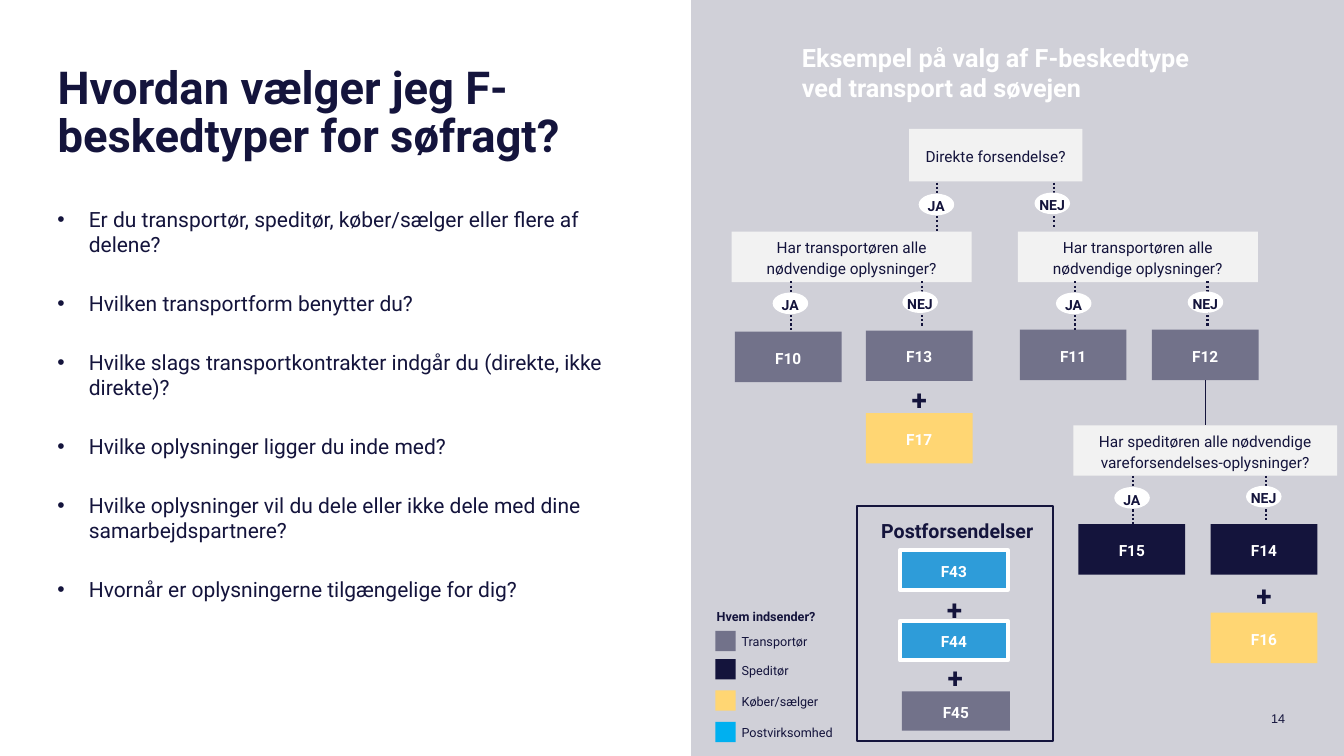
from dataclasses import dataclass

from lxml import etree
from pptx import Presentation
from pptx.dml.color import RGBColor
from pptx.enum import dml, shapes, text
from pptx.oxml import ns
from pptx.util import Cm, Pt


@dataclass(frozen=True)
class Theme:
    navy: str = "14143C"
    grey: str = "72728A"
    panel: str = "D0D0D8"
    pale: str = "F2F2F2"
    yellow: str = "FFD673"
    blue: str = "2E9CD9"
    cyan: str = "00B0F0"
    white: str = "FFFFFF"
    font: str = "Roboto"
    number_font: str = "Arial"
    title: float = 32.4
    plus: float = 20
    heading: float = 18
    body: float = 15
    post: float = 14
    node: float = 11
    answer: float = 10
    small: float = 9


THEME = Theme()

# All positions and sizes are in centimetres.
TITLE = "Hvordan vælger jeg F- beskedtyper for søfragt?"
BULLETS = [
    "Er du transportør, speditør, køber/sælger eller flere af delene?",
    "Hvilken transportform benytter du?",
    "Hvilke slags transportkontrakter indgår du (direkte, ikke direkte)?",
    "Hvilke oplysninger ligger du inde med?",
    "Hvilke oplysninger vil du dele eller ikke dele med dine samarbejdspartnere?",
    "Hvornår er oplysningerne tilgængelige for dig?",
]
HEADING = ["Eksempel på valg af F-beskedtype", "ved transport ad søvejen"]
CARRIER_QUESTION = "Har transportøren alle nødvendige oplysninger?"
QUESTIONS = [
    ("Direkte forsendelse?", (22.91, 3.25, 4.37, 1.32)),
    (CARRIER_QUESTION, (18.44, 5.84, 6.05, 1.27)),
    (CARRIER_QUESTION, (25.65, 5.84, 6.05, 1.27)),
    ("Har speditøren alle nødvendige vareforsendelses-oplysninger?",
     (27.05, 10.72, 6.65, 1.27)),
]
MESSAGE_SIZE = (2.69, 1.27)
MESSAGES = [
    ("F10", 18.52, 8.36, THEME.grey),
    ("F13", 21.82, 8.33, THEME.grey),
    ("F11", 25.70, 8.31, THEME.grey),
    ("F12", 29.03, 8.31, THEME.grey),
    ("F17", 21.82, 10.41, THEME.yellow),
    ("F15", 27.18, 13.21, THEME.navy),
    ("F14", 30.51, 13.21, THEME.navy),
    ("F16", 30.51, 15.44, THEME.yellow),
]
MESSAGE_PLUSES = [(22.53, 9.55), (31.22, 14.48)]
POST_SIZE = (2.72, 0.99)
POST_MESSAGES = [
    ("F43", 22.68, 13.87, THEME.blue, THEME.white),
    ("F44", 22.68, 15.65, THEME.blue, THEME.white),
    ("F45", 22.73, 17.42, THEME.grey, None),
]
POST_PLUSES = [(23.42, 14.83), (23.44, 16.56)]
# Top of the branch, x of the yes line, x of the no line
BRANCHES = [
    (4.60, 23.62, 26.57),
    (7.09, 19.94, 23.24),
    (7.09, 27.08, 30.43),
    (11.99, 28.55, 31.90),
]
# Answer: line length, ellipse offset from the top of the line
ANSWERS = {"JA": (1.26, -0.45, 0.30), "NEJ": (1.14, -0.48, 0.27)}
LEGEND = [
    ("Transportør", 15.90, THEME.grey),
    ("Speditør", 16.61, THEME.navy),
    ("Køber/sælger", 17.40, THEME.yellow),
    ("Postvirksomhed", 18.19, THEME.cyan),
]


def write(shape, content, *, size, color=THEME.navy, bold=False, font=THEME.font,
          align=text.PP_ALIGN.LEFT, anchor=text.MSO_ANCHOR.TOP, inset=None,
          spacing=None, after=None, bullet=None, wrap=True):
    """Fill a shape with one paragraph, or with one paragraph per list item."""
    frame = shape.text_frame
    frame.auto_size = text.MSO_AUTO_SIZE.NONE
    frame.word_wrap = wrap
    frame.vertical_anchor = anchor
    if inset is not None:
        frame.margin_left = frame.margin_right = Cm(inset)
        frame.margin_top = frame.margin_bottom = Cm(inset)
    lines = [content] if isinstance(content, str) else content
    for index, line in enumerate(lines):
        para = frame.paragraphs[0] if index == 0 else frame.add_paragraph()
        para.alignment = align
        if spacing:
            para.line_spacing = spacing
        if after:
            para.space_after = Pt(after)
        if bullet:
            properties = para._p.get_or_add_pPr()
            properties.set("marL", str(Cm(0.79)))
            properties.set("indent", str(-Cm(0.79)))
            etree.SubElement(properties, ns.qn("a:buFont")).set("typeface", "Arial")
            etree.SubElement(properties, ns.qn("a:buChar")).set("char", bullet)
        span = para.add_run()
        span.text = line
        span.font.name = font
        span.font.size = Pt(size)
        span.font.bold = bold
        span.font.color.rgb = RGBColor.from_string(color)


def add_label(parent, content, box, **style):
    label = parent.add_textbox(*map(Cm, box))
    write(label, content, **style)


def add_block(parent, box, fill=None, line=None, width=1,
              kind=shapes.MSO_SHAPE.RECTANGLE):
    block = parent.add_shape(kind, *map(Cm, box))
    block.shadow.inherit = False
    if fill:
        block.fill.solid()
        block.fill.fore_color.rgb = RGBColor.from_string(fill)
    else:
        block.fill.background()
    if line:
        block.line.color.rgb = RGBColor.from_string(line)
        block.line.width = Pt(width)
    else:
        block.line.fill.background()
    return block


def add_node(parent, content, box, fill, line=None, **style):
    block = add_block(parent, box, fill, line, width=3)
    write(block, content, size=THEME.node, align=text.PP_ALIGN.CENTER,
          anchor=text.MSO_ANCHOR.MIDDLE, spacing=1.11, **style)


def add_drop(parent, x, top, length, width, dash=None):
    """Draw a vertical line downwards from its top end."""
    drop = parent.add_connector(shapes.MSO_CONNECTOR.STRAIGHT,
                                Cm(x), Cm(top), Cm(x), Cm(top + length))
    drop.line.color.rgb = RGBColor.from_string(THEME.navy)
    drop.line.width = Pt(width)
    if dash:
        drop.line.dash_style = dash
    etree.SubElement(drop._element.spPr, ns.qn("a:effectLst"))


def add_plus(parent, x, y):
    add_label(parent, "+", (x, y, 1.27, 0.86), size=THEME.plus, bold=True,
              align=text.PP_ALIGN.CENTER, inset=0, spacing=1.11)


def add_answer(page, answer, x, top):
    length, dx, dy = ANSWERS[answer]
    parent = page.shapes.add_group_shape().shapes
    add_drop(parent, x, top, length, 1.5, dml.MSO_LINE.ROUND_DOT)
    add_block(parent, (x + dx, top + dy, 0.86, 0.51), THEME.white, THEME.white,
              kind=shapes.MSO_SHAPE.OVAL)
    add_label(parent, answer, (x + dx - 0.07, top + dy + 0.04, 0.99, 0.30),
              size=THEME.answer, bold=True, align=text.PP_ALIGN.CENTER,
              inset=0, spacing=1.11)


def add_flow(page):
    for content, box in QUESTIONS:
        add_node(page.shapes, content, box, THEME.pale)
    for code, x, y, fill in MESSAGES:
        add_node(page.shapes, code, (x, y, *MESSAGE_SIZE), fill,
                 color=THEME.white, bold=True)
    for place in MESSAGE_PLUSES:
        add_plus(page.shapes, *place)
    add_drop(page.shapes, 30.38, 9.58, 1.14, 0.5)
    for top, *columns in BRANCHES:
        for answer, x in zip(ANSWERS, columns):
            add_answer(page, answer, x, top)


def add_post(page):
    parent = page.shapes.add_group_shape().shapes
    add_block(parent, (21.59, 12.75, 4.95, 5.92), line=THEME.navy, width=1.5)
    add_label(parent, "Postforsendelser", (22.07, 13.00, 4.11, 0.61),
              size=THEME.post, bold=True, align=text.PP_ALIGN.CENTER,
              inset=0, spacing=1.11, wrap=False)
    for code, x, y, fill, line in POST_MESSAGES:
        add_node(parent, code, (x, y, *POST_SIZE), fill, line,
                 color=THEME.white, bold=True)
    for place in POST_PLUSES:
        add_plus(parent, *place)


def add_legend(page):
    parent = page.shapes.add_group_shape().shapes
    style = dict(size=THEME.small, anchor=text.MSO_ANCHOR.MIDDLE, spacing=1.11)
    add_label(parent, "Hvem indsender?", (17.81, 15.14, 4.60, 0.74), bold=True, **style)
    for sender, y, fill in LEGEND:
        add_block(parent, (18.03, y, 0.51, 0.51), fill)
        add_label(parent, sender, (18.44, y - 0.10, 3.81, 0.71), **style)


def main():
    deck = Presentation()
    deck.slide_width, deck.slide_height = Cm(33.87), Cm(19.05)
    page = deck.slides.add_slide(deck.slide_layouts[5])
    add_block(page.shapes, (17.42, 0, 16.45, 19.05), THEME.panel)
    title = page.shapes.title
    title.left, title.top, title.width, title.height = map(Cm, (1.45, 1.65, 15.01, 1.45))
    write(title, TITLE, size=THEME.title, bold=True, inset=0, spacing=0.89)
    add_label(page.shapes, BULLETS, (1.45, 5.21, 14.99, 11.76), size=THEME.body,
              inset=0, after=24, bullet="•")
    add_label(page.shapes, HEADING, (19.96, 1.65, 11.05, 0.36), size=THEME.heading,
              color=THEME.white, bold=True, anchor=text.MSO_ANCHOR.MIDDLE)
    add_flow(page)
    add_post(page)
    add_legend(page)
    add_label(page.shapes, "14", (28.07, 17.83, 4.32, 0.46), size=THEME.small,
              font=THEME.number_font, align=text.PP_ALIGN.RIGHT,
              anchor=text.MSO_ANCHOR.BOTTOM, inset=0)
    deck.save("out.pptx")


if __name__ == "__main__":
    main()
